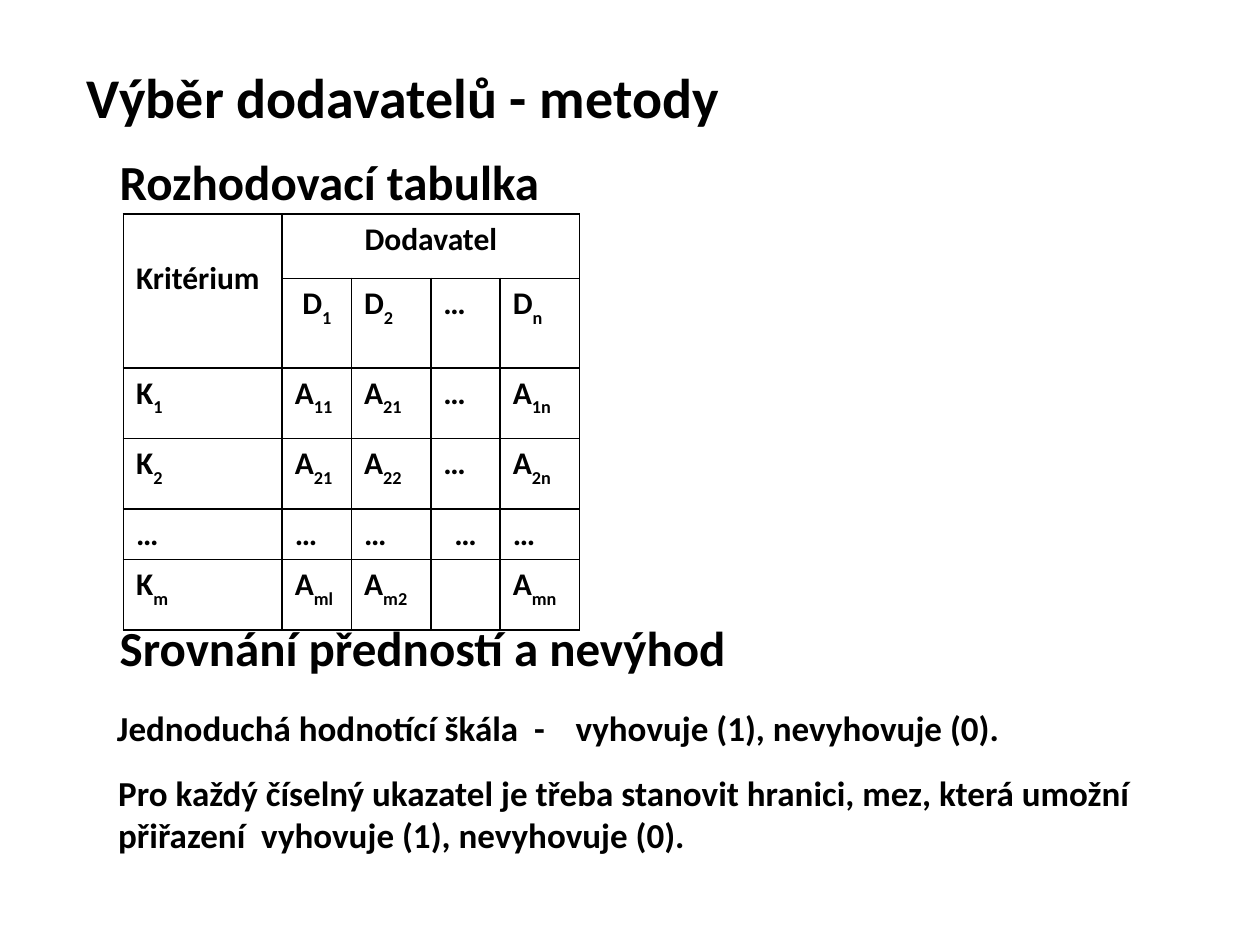
from lxml.etree import SubElement
from pptx import Presentation
from pptx.dml.color import RGBColor
from pptx.enum.shapes import MSO_SHAPE as Shape
from pptx.enum.text import MSO_ANCHOR as Anchor, MSO_AUTO_SIZE as AutoSize, PP_ALIGN as Align
from pptx.oxml.ns import qn
from pptx.util import Inches, Pt

COLORS = {"ink": "000000", "paper": "FFFFFF"}
FONT = "Calibri"
LINE_WIDTH = Pt(1)
MARGIN_LEFT = 0.59
HEADING_INSET = 0.36

# Table grid in inches; "_" starts a subscript
COLUMN_WIDTHS = [1.26, 0.55, 0.63, 0.55, 0.63]
ROW_HEIGHTS = [0.51, 0.7, 0.56, 0.56, 0.4, 0.56]
CELLS = [
    ["Kritérium", "Dodavatel", "", "", ""],
    ["", "D_1", "D_2", "…", "D_n"],
    ["K_1", "A_11", "A_21", "…", "A_1n"],
    ["K_2", "A_21", "A_22", "…", "A_2n"],
    ["…", "…", "…", "…", "…"],
    ["K_m", "A_ml", "A_m2", "", "A_mn"],
]
CENTERED = {(0, 1), (1, 1), (4, 3)}
LEFT_ALIGNED = {(1, 2), (1, 3), (1, 4), (2, 3), (3, 3)}
KRITERIUM_TOP = 0.36


def color(name):
    return RGBColor.from_string(COLORS[name])


def paint(target):
    target.fill.solid()
    target.fill.fore_color.rgb = color("paper")


def add_run(paragraph, text, size, subscript=False):
    run = paragraph.add_run()
    run.text = text
    run.font.name = FONT
    run.font.size = Pt(size)
    run.font.bold = True
    run.font.color.rgb = color("ink")
    if subscript:
        run.font._element.set("baseline", "-30000")


def add_title(slide, text, left, top, width, height):
    title = slide.shapes.title
    title.left, title.top = Inches(left), Inches(top)
    title.width, title.height = Inches(width), Inches(height)
    paint(title)
    frame = title.text_frame
    frame.auto_size = AutoSize.SHAPE_TO_FIT_TEXT
    frame.vertical_anchor = Anchor.MIDDLE
    frame.paragraphs[0].alignment = Align.LEFT
    add_run(frame.paragraphs[0], text, 32)


def fill_heading(shape, text):
    frame = shape.text_frame
    frame.word_wrap = True
    frame.vertical_anchor = Anchor.TOP
    frame.margin_left = Inches(HEADING_INSET)
    frame.paragraphs[0].alignment = Align.LEFT
    add_run(frame.paragraphs[0], text, 28)


def add_panel_heading(slide, text, left, top, width, height):
    panel = slide.shapes.add_shape(
        Shape.RECTANGLE, Inches(left), Inches(top), Inches(width), Inches(height))
    panel.shadow.inherit = False
    panel.line.fill.background()
    paint(panel)
    fill_heading(panel, text)


def add_heading(slide, text, left, top, width, height):
    box = slide.shapes.add_textbox(Inches(left), Inches(top), Inches(width), Inches(height))
    fill_heading(box, text)


def add_text(slide, text, left, top, width, height, tab=None):
    box = slide.shapes.add_textbox(Inches(left), Inches(top), Inches(width), Inches(height))
    frame = box.text_frame
    frame.word_wrap = True
    paragraph = frame.paragraphs[0]
    if tab:
        tab_list = SubElement(paragraph._p.get_or_add_pPr(), qn("a:tabLst"))
        SubElement(tab_list, qn("a:tab"), pos=str(Inches(tab)), algn="l")
    add_run(paragraph, text, 20)


def set_borders(cell):
    properties = cell._tc.get_or_add_tcPr()
    for side in ("lnL", "lnR", "lnT", "lnB"):
        line = SubElement(properties, qn(f"a:{side}"), w=str(LINE_WIDTH))
        fill = SubElement(line, qn("a:solidFill"))
        SubElement(fill, qn("a:srgbClr"), val=COLORS["ink"])


def cell_alignment(position):
    if position in CENTERED:
        return Align.CENTER
    return Align.LEFT if position in LEFT_ALIGNED else Align.JUSTIFY


def fill_cell(cell, text, alignment):
    set_borders(cell)
    paint(cell)
    if not text:
        return
    paragraph = cell.text_frame.paragraphs[0]
    paragraph.alignment = alignment
    base, _, subscript = text.partition("_")
    add_run(paragraph, base, 18)
    if subscript:
        add_run(paragraph, subscript, 18, subscript=True)


def add_decision_table(slide, left, top):
    table = slide.shapes.add_table(
        len(ROW_HEIGHTS), len(COLUMN_WIDTHS), Inches(left), Inches(top),
        Inches(sum(COLUMN_WIDTHS)), Inches(sum(ROW_HEIGHTS))).table
    for column, width in zip(table.columns, COLUMN_WIDTHS):
        column.width = Inches(width)
    for row, height in zip(table.rows, ROW_HEIGHTS):
        row.height = Inches(height)

    # Header spans
    table.cell(0, 0).merge(table.cell(1, 0))
    table.cell(0, 1).merge(table.cell(0, len(COLUMN_WIDTHS) - 1))
    table.cell(0, 0).margin_top = Inches(KRITERIUM_TOP)

    for row, texts in enumerate(CELLS):
        for column, text in enumerate(texts):
            fill_cell(table.cell(row, column), text, cell_alignment((row, column)))


def main():
    presentation = Presentation()
    presentation.slide_width, presentation.slide_height = Inches(10), Inches(7.5)
    slide = presentation.slides.add_slide(presentation.slide_layouts[5])

    # Title and decision table
    add_title(slide, "Výběr dodavatelů - metody", MARGIN_LEFT, 0.44, 8.19, 0.64)
    add_panel_heading(slide, "Rozhodovací tabulka", MARGIN_LEFT, 1.15, 4.02, 0.57)
    add_decision_table(slide, 0.98, 1.7)

    # Comparison of advantages and drawbacks
    add_heading(slide, "Srovnání předností a nevýhod", MARGIN_LEFT, 4.85, 6.93, 0.57)
    add_text(slide, "Jednoduchá hodnotící škála  -\tvyhovuje (1), nevyhovuje (0).",
             0.83, 5.56, 8.2, 0.44, tab=3.64)
    add_text(slide, "Pro každý číselný ukazatel je třeba stanovit hranici, mez, "
             "která umožní přiřazení  vyhovuje (1), nevyhovuje (0).",
             0.84, 6.07, 9.04, 0.77)

    presentation.save("out.pptx")


if __name__ == "__main__":
    main()
